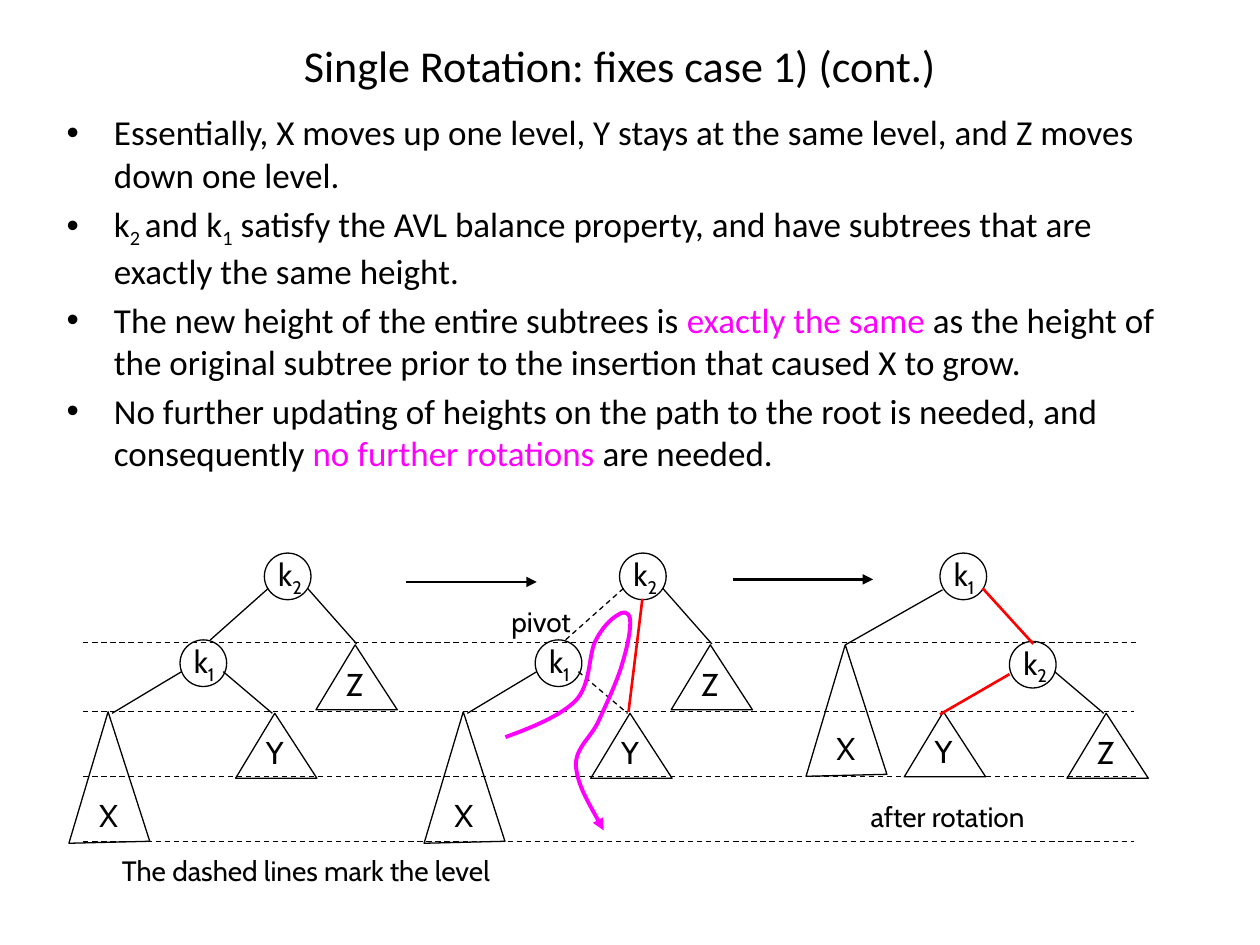
import pptx
import pptx.util
import pptx.dml.color
import pptx.enum.dml
import pptx.enum.shapes
import pptx.enum.text
import pptx.oxml.ns
import lxml.etree

Cm, Pt = pptx.util.Cm, pptx.util.Pt
COLORS = {"ink": "000000", "accent": "FF00FF", "new": "FF0000"}

TITLE = "Single Rotation: fixes case 1) (cont.)"
# Each span is (text, style); the style is "", "sub" or "accent".
BULLETS = [
    [("Essentially, X moves up one level, Y stays at the same level, and Z moves down one level.", "")],
    [("k", ""), ("2 ", "sub"), ("and k", ""), ("1", "sub"),
     (" satisfy the AVL balance property, and have subtrees that are exactly the same height.", "")],
    [("The new height of the entire subtrees is ", ""), ("exactly the same", "accent"),
     (" as the height of the original subtree prior to the insertion that caused X to grow.", "")],
    [("No further updating of heights on the path to the root is needed, and consequently ", ""),
     ("no further rotations", "accent"), (" are needed.", "")],
]

# Drawing coordinates are centimetres.
LEVELS = [(12.95, 22.94), (14.35, 22.86), (15.65, 22.94), (16.97, 22.86)]
LEVEL_LEFT = 1.68

SOLID, DASHED, RED = {}, {"dashed": True}, {"color": "new", "width": 1.5}
ARROW = {"width": 1.5, "arrow": True}
BEFORE = {
    "nodes": [("2", 5.8, 11.62), ("1", 4.1, 13.37)],
    "subtrees": [("X", 2.18, 14.35), ("Y", 5.54, 14.38), ("Z", 7.16, 13)],
    "edges": {
        "k1-X": (3.66, 13.54, 2.26, 14.38),
        "k1-Y": (4.5, 13.54, 5.49, 14.38),
        "k2-k1": (5.41, 11.86, 4.24, 12.9),
        "k2-Z": (6.2, 11.86, 7.19, 12.98),
    },
}
AFTER = {
    "nodes": [("1", 19.42, 11.62), ("2", 20.82, 13.4)],
    "subtrees": [("X", 17.04, 13), ("Y", 19.02, 14.35), ("Z", 22.3, 14.38)],
    "edges": {
        "k1-X": (19, 11.89, 17.04, 13),
        "k1-k2": (19.81, 11.86, 20.83, 12.98),
        "k2-Y": (20.35, 13.59, 18.95, 14.4),
        "k2-Z": (21.26, 13.54, 22.25, 14.38),
    },
}
# (tree, shift to the right, edges that differ from a plain line)
TREES = [
    (BEFORE, 0, {}),
    (BEFORE, 7.16, {"k1-Y": DASHED, "k2-k1": DASHED}),
    (AFTER, 0, {"k1-k2": RED, "k2-Y": RED}),
]
EXTRA_LINES = [
    ((8.18, 11.73, 10.82, 11.73), ARROW),
    ((14.78, 11.68, 17.6, 11.68), ARROW),
    ((12.95, 12.07, 12.67, 14.35), RED),
]
CAPTIONS = [
    ("The dashed lines mark the level", 2.21, 17.09, 8.41),
    ("after rotation", 17.3, 16, 3.78),
    ("pivot", 10.06, 12.07, 1.73),
]
# Start point, then three Bézier points for each stretch.
PIVOT_PATH = [
    (10.19, 14.86),
    (10.74, 14.66), (11.3, 14.43), (11.61, 14.12),
    (11.91, 13.79), (11.86, 13.26), (11.99, 12.95),
    (12.12, 12.67), (12.32, 12.47), (12.45, 12.4),
    (12.55, 12.32), (12.67, 12.32), (12.7, 12.47),
    (12.73, 12.65), (12.65, 13.03), (12.55, 13.36),
    (12.45, 13.72), (12.22, 14.2), (12.07, 14.53),
    (11.91, 14.88), (11.61, 15.06), (11.61, 15.42),
    (11.63, 15.8), (11.91, 16.26), (12.17, 16.74),
]
NODE_SIZE = 0.94
SMALL_FEET = [(-0.79, 1.31), (0.85, 1.31)]
TALL_FEET = [(-0.79, 2.65), (0.84, 2.61)]


def rgb(name):
    return pptx.dml.color.RGBColor.from_string(COLORS[name])


def add_spans(para, spans, font, size):
    for text, style in spans:
        span = para.add_run()
        span.text = text
        for key, value in {"name": font, "size": Pt(size)}.items():
            setattr(span.font, key, value)
        span.font.color.rgb = rgb("accent" if style == "accent" else "ink")
        if style == "sub":
            span.font._element.set("baseline", "-25000")


def place(shape, left, top, width, height):
    for key, value in zip(("left", "top", "width", "height"), (left, top, width, height)):
        setattr(shape, key, Cm(value))


def add_label(page, spans, left, top, width, height, size=18):
    box = page.shapes.add_textbox(Cm(left), Cm(top), Cm(width), Cm(height))
    box.text_frame.word_wrap = False
    add_spans(box.text_frame.paragraphs[0], spans, "Cabin", size)


def style_line(shape, color="ink", width=0.75, dashed=False, arrow=False):
    shape.line.color.rgb = rgb(color)
    shape.line.width = Pt(width)
    if dashed:
        shape.line.dash_style = pptx.enum.dml.MSO_LINE.DASH
    if arrow:
        outline = shape.line._get_or_add_ln()
        lxml.etree.SubElement(outline, pptx.oxml.ns.qn("a:tailEnd"), type="triangle")


def add_line(page, ends, **style):
    line = page.shapes.add_connector(
        pptx.enum.shapes.MSO_CONNECTOR.STRAIGHT, *[Cm(value) for value in ends])
    style_line(line, **style)
    lxml.etree.SubElement(line._element.spPr, pptx.oxml.ns.qn("a:effectLst"))


def add_outline(page, points, close, **style):
    start, *others = [(Cm(x), Cm(y)) for x, y in points]
    builder = page.shapes.build_freeform(*start)
    builder.add_line_segments(others, close=close)
    shape = builder.convert_to_shape()
    shape.shadow.inherit = False
    shape.fill.background()
    style_line(shape, **style)
    return shape


def bend(shape):
    """Turn each three straight segments of the outline into one cubic curve."""
    qn = pptx.oxml.ns.qn
    segments = list(shape._element.iter(qn("a:lnTo")))
    outline = segments[0].getparent()
    for first in range(0, len(segments), 3):
        curve = lxml.etree.SubElement(outline, qn("a:cubicBezTo"))
        for segment in segments[first:first + 3]:
            curve.append(segment[0])
            outline.remove(segment)


def add_node(page, number, x, y):
    left, top = x - NODE_SIZE / 2, y - NODE_SIZE / 2
    circle = page.shapes.add_shape(
        pptx.enum.shapes.MSO_SHAPE.OVAL, Cm(left), Cm(top), Cm(NODE_SIZE), Cm(NODE_SIZE))
    circle.shadow.inherit = False
    circle.fill.background()
    style_line(circle)
    add_label(page, [("k", ""), (number, "sub")], left + 0.03, top - 0.08, 1.07, 1.02)


def add_subtree(page, name, x, y):
    tall = name == "X"
    feet = TALL_FEET if tall else SMALL_FEET
    add_outline(page, [(x, y)] + [(x + dx, y + dy) for dx, dy in feet], close=True)
    add_label(page, [(name, "")], x - 0.43, y + (1.57 if tall else 0.28), 0.89, 1.02)


def add_tree(page, tree, shift, special):
    for number, x, y in tree["nodes"]:
        add_node(page, number, x + shift, y)
    for name, x, y in tree["subtrees"]:
        add_subtree(page, name, x + shift, y)
    for name, (x1, y1, x2, y2) in tree["edges"].items():
        add_line(page, (x1 + shift, y1, x2 + shift, y2), **special.get(name, SOLID))


def main():
    deck = pptx.Presentation()
    deck.slide_width, deck.slide_height = Cm(25.4), Cm(19.05)
    page = deck.slides.add_slide(deck.slide_layouts[1])

    title, body = page.placeholders
    place(title, 1.7, 0.84, 21.59, 0.94)
    place(body, 1.09, 2.11, 23.27, 9.12)
    for box in (title, body):
        box.text_frame.auto_size = pptx.enum.text.MSO_AUTO_SIZE.NONE
    add_spans(title.text_frame.paragraphs[0], [(TITLE, "")], "Calibri", 25.2)
    for index, spans in enumerate(BULLETS):
        frame = body.text_frame
        para = frame.add_paragraph() if index else frame.paragraphs[0]
        para.space_before = Pt(4)
        add_spans(para, spans, "Calibri", 20)

    for y, right in LEVELS:
        add_line(page, (LEVEL_LEFT, y, right, y), **DASHED)
    for tree, shift, special in TREES:
        add_tree(page, tree, shift, special)
    for ends, style in EXTRA_LINES:
        add_line(page, ends, **style)
    bend(add_outline(page, PIVOT_PATH, close=False, color="accent", width=2.25, arrow=True))
    for text, left, top, width in CAPTIONS:
        add_label(page, [(text, "")], left, top, width, 0.94, size=16)
    deck.save("out.pptx")


if __name__ == "__main__":
    main()
